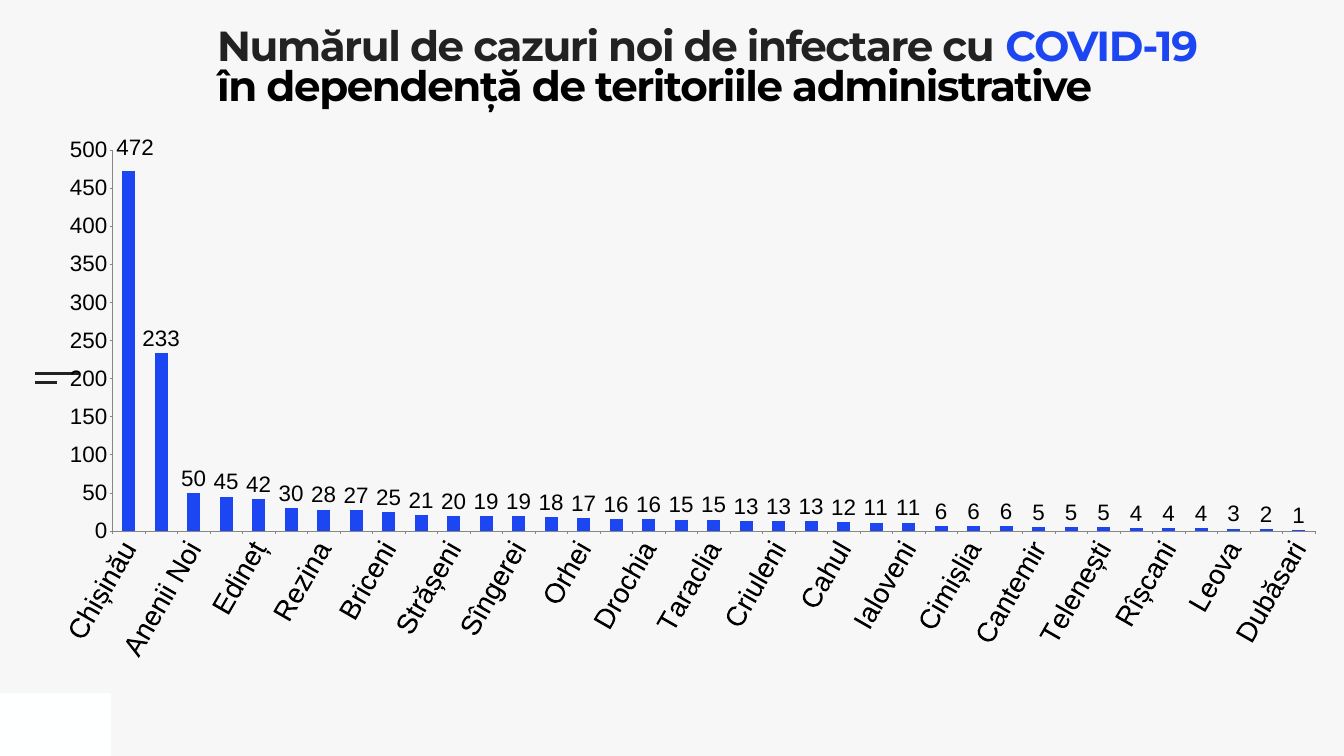
from lxml import etree
from pptx import Presentation
from pptx.chart.data import CategoryChartData
from pptx.dml.color import RGBColor
from pptx.enum import chart as ch, shapes, text
from pptx.oxml import ns
from pptx.util import Inches, Pt

BACKGROUND = RGBColor(0xF7, 0xF7, 0xF7)
WHITE = RGBColor(0xFE, 0xFF, 0xFF)
DARK = RGBColor(0x22, 0x22, 0x22)
BLACK = RGBColor(0, 0, 0)
BLUE = RGBColor(0x1D, 0x46, 0xF3)
GREY = RGBColor(0x86, 0x86, 0x86)

TITLE = [
    [("Numărul de cazuri noi de infectare cu ", DARK), ("COVID-19", BLUE)],
    [("în dependență de teritoriile administrative", BLACK)],
]
CASES = [
    ("Chișinău", 472), ("Transnistria", 233), ("Anenii Noi", 50),
    ("Ștefan Vodă", 45), ("Edineț", 42), ("Comrat", 30), ("Rezina", 28),
    ("Fălești", 27), ("Briceni", 25), ("Șoldănești", 21), ("Strășeni", 20),
    ("Bălți", 19), ("Sîngerei", 19), ("Glodeni", 18), ("Orhei", 17),
    ("Ceadîr-Lunga", 16), ("Drochia", 16), ("Nisporeni", 15),
    ("Taraclia", 15), ("Călărași", 13), ("Criuleni", 13), ("Hîncești", 13),
    ("Cahul", 12), ("Dondușeni", 11), ("Ialoveni", 11), ("Basarabeasca", 6),
    ("Cimișlia", 6), ("Ungheni", 6), ("Cantemir", 5), ("Florești", 5),
    ("Telenești", 5), ("Ocnița", 4), ("Rîșcani", 4), ("Soroca", 4),
    ("Leova", 3), ("Căușeni", 2), ("Dubăsari", 1),
]
MENU_LINES = [(7.41, 0.88), (7.59, 0.44)]  # top, length


def add_run(paragraph, words, font, size, color, bold=False, spacing=0):
    run = paragraph.add_run()
    run.text = words
    run.font.name, run.font.size, run.font.bold = font, Pt(size), bold
    run.font.color.rgb = color
    run.font._element.set("spc", str(spacing * 100))


def chart_layout(**settings):
    """Return a c:layout element with a manual layout."""
    layout = etree.Element(ns.qn("c:layout"))
    manual = etree.SubElement(layout, ns.qn("c:manualLayout"))
    for tag, value in settings.items():
        etree.SubElement(manual, ns.qn("c:" + tag)).set("val", str(value))
    return layout


def add_title(slide):
    title = slide.shapes.title
    title.left, title.top = Inches(4.31), Inches(0.58)
    title.width, title.height = Inches(20.02), Inches(2.73)
    frame = title.text_frame
    frame.margin_left = frame.margin_right = 0
    frame.margin_top = frame.margin_bottom = 0
    frame.word_wrap = True
    frame.auto_size = text.MSO_AUTO_SIZE.NONE
    frame.vertical_anchor = text.MSO_ANCHOR.TOP
    for i, line in enumerate(TITLE):
        paragraph = frame.add_paragraph() if i else frame.paragraphs[0]
        paragraph.alignment = text.PP_ALIGN.LEFT
        paragraph.line_spacing = 0.8
        paragraph.space_before = Pt(0)
        for words, color in line:
            add_run(paragraph, words, "Montserrat", 60, color,
                    bold=True, spacing=-2)


def add_decoration(slide):
    corner = slide.shapes.add_shape(
        shapes.MSO_SHAPE.RECTANGLE, 0, Inches(13.76), Inches(2.2), Inches(1.24))
    corner.shadow.inherit = False
    corner.fill.solid()
    corner.fill.fore_color.rgb = WHITE
    corner.line.fill.background()
    left = 0.69
    for top, length in MENU_LINES:
        line = slide.shapes.add_connector(
            shapes.MSO_CONNECTOR.STRAIGHT, Inches(left), Inches(top),
            Inches(left + length), Inches(top))
        line.line.color.rgb = DARK
        line.line.width = Pt(3)
        etree.SubElement(line._element.spPr, ns.qn("a:effectLst"))


def add_case_chart(slide):
    data = CategoryChartData()
    data.categories = [place for place, _ in CASES]
    data.add_series("Series 1", [count for _, count in CASES])
    chart = slide.shapes.add_chart(
        ch.XL_CHART_TYPE.COLUMN_CLUSTERED, Inches(1.1), Inches(2.68),
        Inches(25.17), Inches(11.85), data).chart
    chart.has_legend = chart.has_title = False
    chart.font.name, chart.font.size = "Arial", Pt(40)
    chart.font.color.rgb = BLACK

    plot = chart.plots[0]
    plot.gap_width = 150
    plot.vary_by_categories = False
    bars = plot.series[0]
    bars.format.fill.solid()
    bars.format.fill.fore_color.rgb = BLUE

    labels = bars.data_labels
    labels.show_value = True
    labels.position = ch.XL_LABEL_POSITION.OUTSIDE_END
    labels.font.size = Pt(32)
    highest = bars.points[0].data_label
    highest.font.size = Pt(32)
    highest.position = ch.XL_LABEL_POSITION.OUTSIDE_END
    index = labels._element.find(ns.qn("c:dLbl")).find(ns.qn("c:idx"))
    index.addnext(chart_layout(x=0.005, y=-0.015))

    for axis in (chart.category_axis, chart.value_axis):
        axis.has_major_gridlines = False
        axis.major_tick_mark = ch.XL_TICK_MARK.OUTSIDE
        axis.format.line.color.rgb = GREY
    names = chart.category_axis.tick_labels
    names.font.size = Pt(40)
    body = chart.category_axis._element.find(
        ns.qn("c:txPr")).find(ns.qn("a:bodyPr"))
    body.set("rot", str(-60 * 60000))
    body.set("vert", "horz")
    counts = chart.value_axis
    counts.minimum_scale, counts.maximum_scale = 0, 500
    counts.major_unit = 50
    counts.tick_labels.font.size = Pt(32)

    area = chart._chartSpace.chart.plotArea
    for old in area.findall(ns.qn("c:layout")):
        area.remove(old)
    area.insert(0, chart_layout(
        layoutTarget="inner", xMode="edge", yMode="edge",
        x=0.045, y=0.022, w=0.948, h=0.64))


def main():
    deck = Presentation()
    deck.slide_width, deck.slide_height = Inches(26.67), Inches(15)
    slide = deck.slides.add_slide(deck.slide_layouts[5])
    slide.background.fill.solid()
    slide.background.fill.fore_color.rgb = BACKGROUND
    add_decoration(slide)
    add_title(slide)
    add_case_chart(slide)
    deck.save("out.pptx")


if __name__ == "__main__":
    main()
